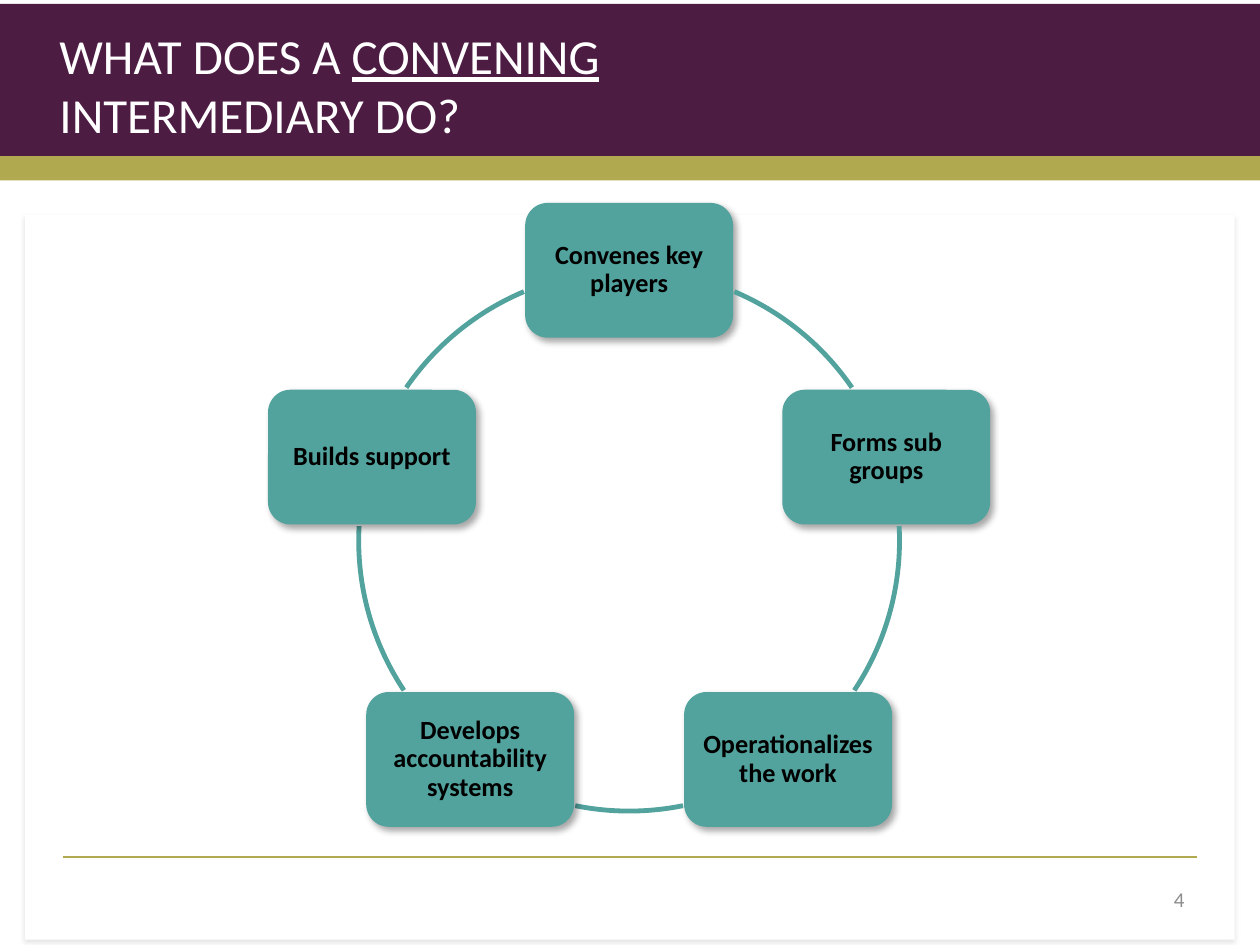
from math import cos, radians, sin

from lxml import etree
from pptx import Presentation
from pptx.dml.color import RGBColor
from pptx.enum.shapes import MSO_CONNECTOR, MSO_SHAPE
from pptx.enum.text import MSO_ANCHOR, MSO_AUTO_SIZE, PP_ALIGN
from pptx.oxml.ns import qn
from pptx.util import Pt

RECT, ROUNDED, ARC = MSO_SHAPE.RECTANGLE, MSO_SHAPE.ROUNDED_RECTANGLE, MSO_SHAPE.ARC
STRAIGHT = MSO_CONNECTOR.STRAIGHT
LEFT, CENTER, RIGHT = PP_ALIGN.LEFT, PP_ALIGN.CENTER, PP_ALIGN.RIGHT
MIDDLE = MSO_ANCHOR.MIDDLE
NO_AUTOFIT = MSO_AUTO_SIZE.NONE

PLUM = RGBColor(0x4D, 0x1C, 0x43)
OLIVE = RGBColor(0xB0, 0xA9, 0x4F)
TEAL = RGBColor(0x52, 0xA2, 0x9D)
GRAY = RGBColor(0x8C, 0x8C, 0x8C)
WHITE = RGBColor(0xFF, 0xFF, 0xFF)
BLACK = RGBColor(0, 0, 0)

FONT = "Calibri"
ROLES = [
    "Convenes key players",
    "Forms sub groups",
    "Operationalizes the work",
    "Develops accountability systems",
    "Builds support",
]
ARC_SPANS = [(292.9, 325.5), (356.9, 33.6), (78.5, 101.5), (146.4, 183.1), (214.5, 247.1)]


def add_run(paragraph, text, size, color, bold=False, underline=False):
    run = paragraph.add_run()
    run.text = text
    font = run.font
    font.name, font.size, font.bold, font.underline = FONT, Pt(size), bold, underline
    font.color.rgb = color


def write_text(frame, text, align=LEFT, inset=7.2, spacing=None, **font_format):
    frame.word_wrap = True
    frame.vertical_anchor = MIDDLE
    frame.margin_left = frame.margin_right = Pt(inset)
    paragraph = frame.paragraphs[0]
    paragraph.alignment = align
    paragraph.line_spacing = spacing
    add_run(paragraph, text, **font_format)


def add_shadow(shape, opacity, blur, distance, angle):
    effects = shape._element.spPr.find(qn("a:effectLst"))
    shadow = etree.SubElement(
        effects, qn("a:outerShdw"), blurRad=str(Pt(blur)), dist=str(Pt(distance)),
        dir=str(angle * 60000), algn="ctr", rotWithShape="0")
    color = etree.SubElement(shadow, qn("a:srgbClr"), val="000000")
    etree.SubElement(color, qn("a:alpha"), val=str(opacity * 1000))


def add_block(slide, box, color, preset=RECT):
    block = slide.shapes.add_shape(preset, *map(Pt, box))
    block.shadow.inherit = False
    block.fill.solid()
    block.fill.fore_color.rgb = color
    block.line.fill.background()
    return block


def add_header(slide, left, top, width, height):
    add_block(slide, (left, top, width, height - 11), PLUM)
    add_block(slide, (left, top + height - 13.9, width, 13.9), OLIVE)
    title = slide.shapes.title
    slide.shapes._spTree.append(title._element)
    title.left, title.top = Pt(left + 26.8), Pt(top + 8.8)
    title.width, title.height = Pt(481), Pt(74.2)
    frame = title.text_frame
    frame.auto_size = NO_AUTOFIT
    write_text(frame, "WHAT DOES A ", size=28, color=WHITE)
    heading = frame.paragraphs[0]
    add_run(heading, "CONVENING ", 28, WHITE, underline=True)
    add_run(heading, "INTERMEDIARY DO?", 28, WHITE)


def add_panel(slide, left, top, width, height):
    panel = add_block(slide, (left, top, width, height), WHITE)
    add_shadow(panel, 10, 3.1, 1.8, 90)
    rule_y = Pt(top + height - 47.4)
    rule = slide.shapes.add_connector(
        STRAIGHT, Pt(left + 21.6), rule_y, Pt(left + width - 21.6), rule_y)
    rule.line.color.rgb = OLIVE
    rule.line.width = Pt(1)
    etree.SubElement(rule._element.spPr, qn("a:effectLst"))


def add_role_cycle(slide, left, top, diameter, node_width=118.8, node_height=77):
    radius = diameter / 2
    for index, (role, (start, end)) in enumerate(zip(ROLES, ARC_SPANS)):
        angle = radians(360 / len(ROLES) * index - 90)
        x = left + radius * (1 + cos(angle)) - node_width / 2
        y = top + radius * (1 + sin(angle)) - node_height / 2
        node = add_block(slide, (x, y, node_width, node_height), TEAL, ROUNDED)
        add_shadow(node, 35, 4, 3, 45)
        write_text(node.text_frame, role, align=CENTER, inset=4.3, spacing=0.9,
                   size=15, color=BLACK, bold=True)

        link = slide.shapes.add_shape(ARC, Pt(left), Pt(top), Pt(diameter), Pt(diameter))
        link.shadow.inherit = False
        link.fill.background()
        link.line.color.rgb = TEAL
        link.line.width = Pt(2.75)
        link.adjustments[0] = start * 0.6
        link.adjustments[1] = end * 0.6


def add_page_number(slide, left, top, width, height):
    number = slide.shapes.add_textbox(Pt(left), Pt(top), Pt(width), Pt(height))
    write_text(number.text_frame, "4", align=RIGHT, size=12, color=GRAY)


def main():
    deck = Presentation()
    deck.slide_width, deck.slide_height = Pt(720), Pt(540)
    slide = deck.slides.add_slide(deck.slide_layouts[5])
    add_header(slide, 0, 2.2, 720, 101)
    add_panel(slide, 14.4, 123, 691.2, 414)
    add_role_cycle(slide, 205, 154.5, 309)
    add_page_number(slide, 516, 499.7, 168, 28.8)
    deck.save("out.pptx")


if __name__ == "__main__":
    main()
